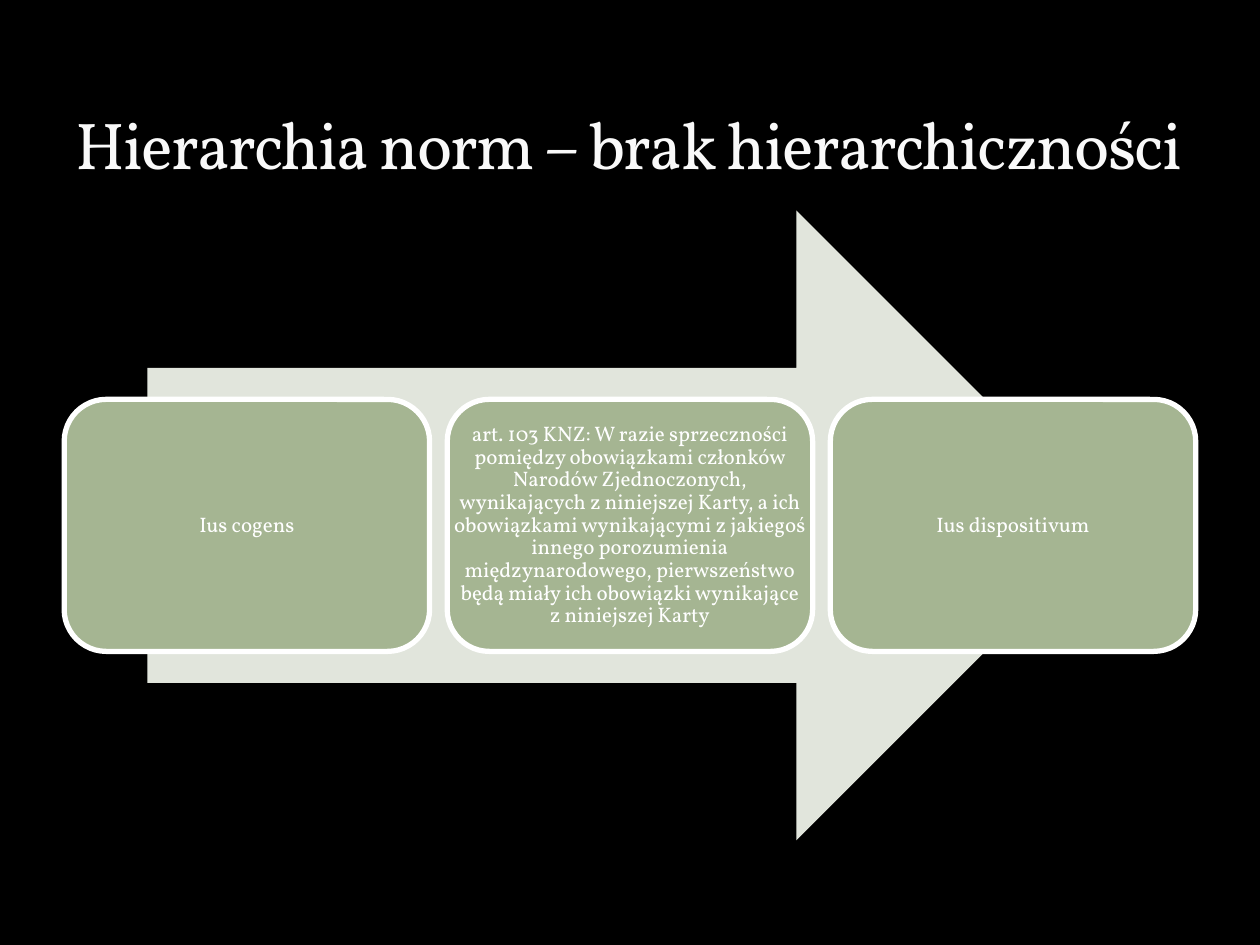
from pptx import Presentation
from pptx.dml.color import RGBColor
from pptx.enum.shapes import MSO_SHAPE as Shape
from pptx.enum.text import MSO_ANCHOR as Anchor, PP_ALIGN as Align
from pptx.util import Inches, Pt

CARD_WIDTH, CARD_HEIGHT, CARD_GAP = 2.9, 2, 0.14
CARD_LEFT, CARD_TOP = 0.51, 3.17
CARD_TEXTS = [
    "Ius cogens",
    "art. 103 KNZ: W razie sprzeczności pomiędzy obowiązkami członków "
    "Narodów Zjednoczonych, wynikających z niniejszej Karty, a ich "
    "obowiązkami wynikającymi z jakiegoś innego porozumienia "
    "międzynarodowego, pierwszeństwo będą miały ich obowiązki wynikające "
    "z niniejszej Karty",
    "Ius dispositivum",
]


def paint(color_format, color):
    color_format.rgb = RGBColor.from_string(color)


def add_text(slide, area, text, size, color, frame_format, para_format):
    """Add a one-paragraph text box and return its run."""
    frame = slide.shapes.add_textbox(*area).text_frame
    para = frame.paragraphs[0]
    for target, values in ((frame, frame_format), (para, para_format)):
        for name, value in values.items():
            setattr(target, name, value)
    span = para.add_run()
    span.text = text
    span.font.name = "Vollkorn"
    span.font.size = Pt(size)
    paint(span.font.color, color)
    return span


deck = Presentation()
deck.slide_width, deck.slide_height = Inches(10), Inches(7.5)
slide = deck.slides.add_slide(deck.slide_layouts[6])
background = slide.background.fill
background.solid()
paint(background.fore_color, "000000")

# Arrow behind the cards
arrow = slide.shapes.add_shape(
    Shape.RIGHT_ARROW, Inches(1.17), Inches(1.67), Inches(7.65), Inches(5))
arrow.shadow.inherit = False
arrow.fill.solid()
paint(arrow.fill.fore_color, "E1E5DC")
arrow.line.fill.background()

# Cards; the text boxes span the full card width, past the rounded corners
card_frame = {"word_wrap": True, "vertical_anchor": Anchor.MIDDLE}
for side in ("left", "top", "right", "bottom"):
    card_frame[f"margin_{side}"] = Inches(0.05)
card_para = {"alignment": Align.CENTER, "line_spacing": 0.9}

for index, text in enumerate(CARD_TEXTS):
    left = CARD_LEFT + index * (CARD_WIDTH + CARD_GAP)
    area = [Inches(v) for v in (left, CARD_TOP, CARD_WIDTH, CARD_HEIGHT)]
    card = slide.shapes.add_shape(Shape.ROUNDED_RECTANGLE, *area)
    card.shadow.inherit = False
    card.fill.solid()
    paint(card.fill.fore_color, "A5B592")
    paint(card.line.color, "FFFFFF")
    card.line.width = Pt(3)
    add_text(slide, area, text, 12, "FFFFFF", card_frame, card_para)

# Title
title_area = [Inches(v) for v in (0.5, 0.17, 9, 1.33)]
title = add_text(
    slide, title_area, "Hierarchia norm – brak hierarchiczności", 37.8, "F9F9F9",
    {"word_wrap": True, "vertical_anchor": Anchor.BOTTOM}, {"alignment": Align.LEFT})
title.font._element.set("spc", "-100")

deck.save("out.pptx")
